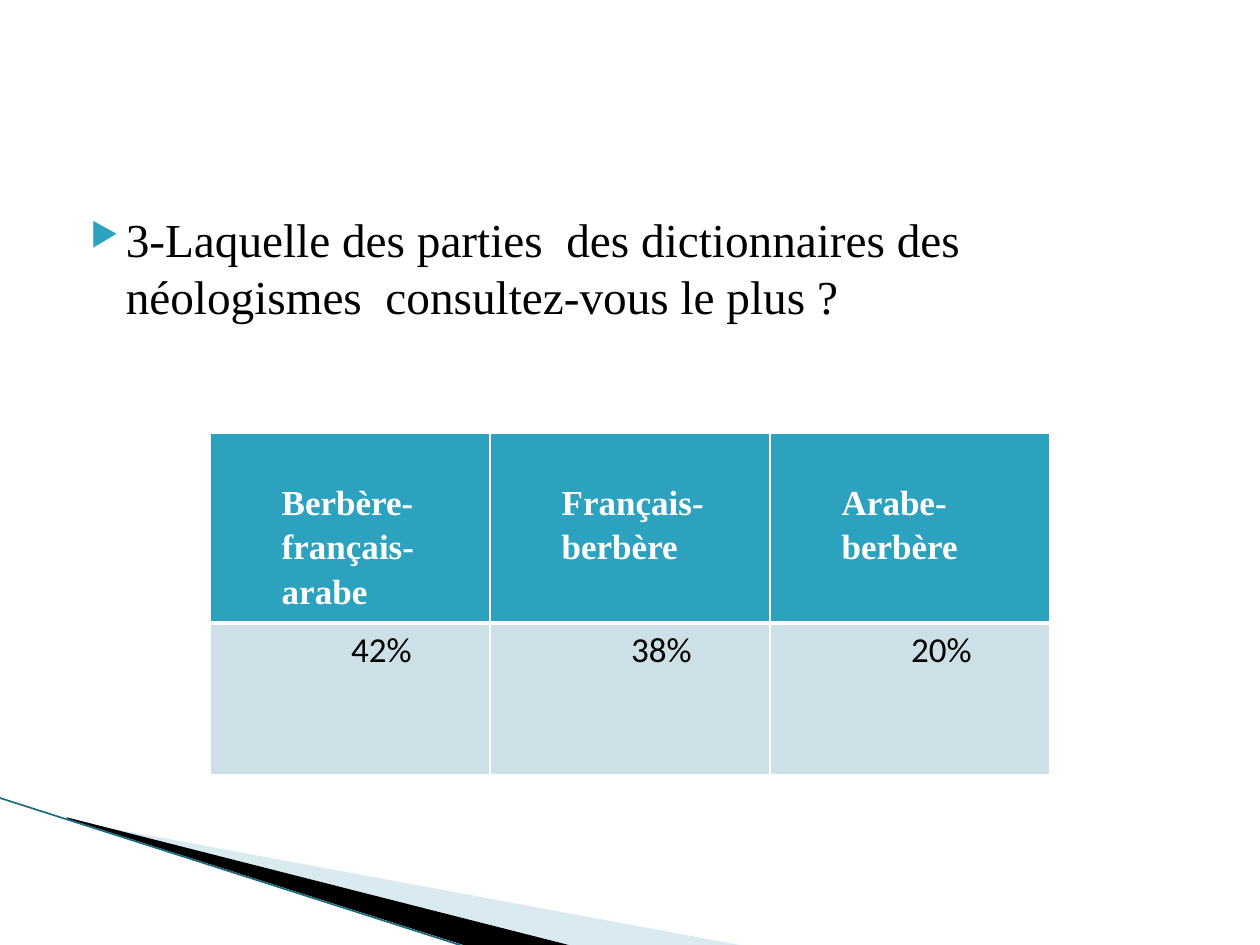
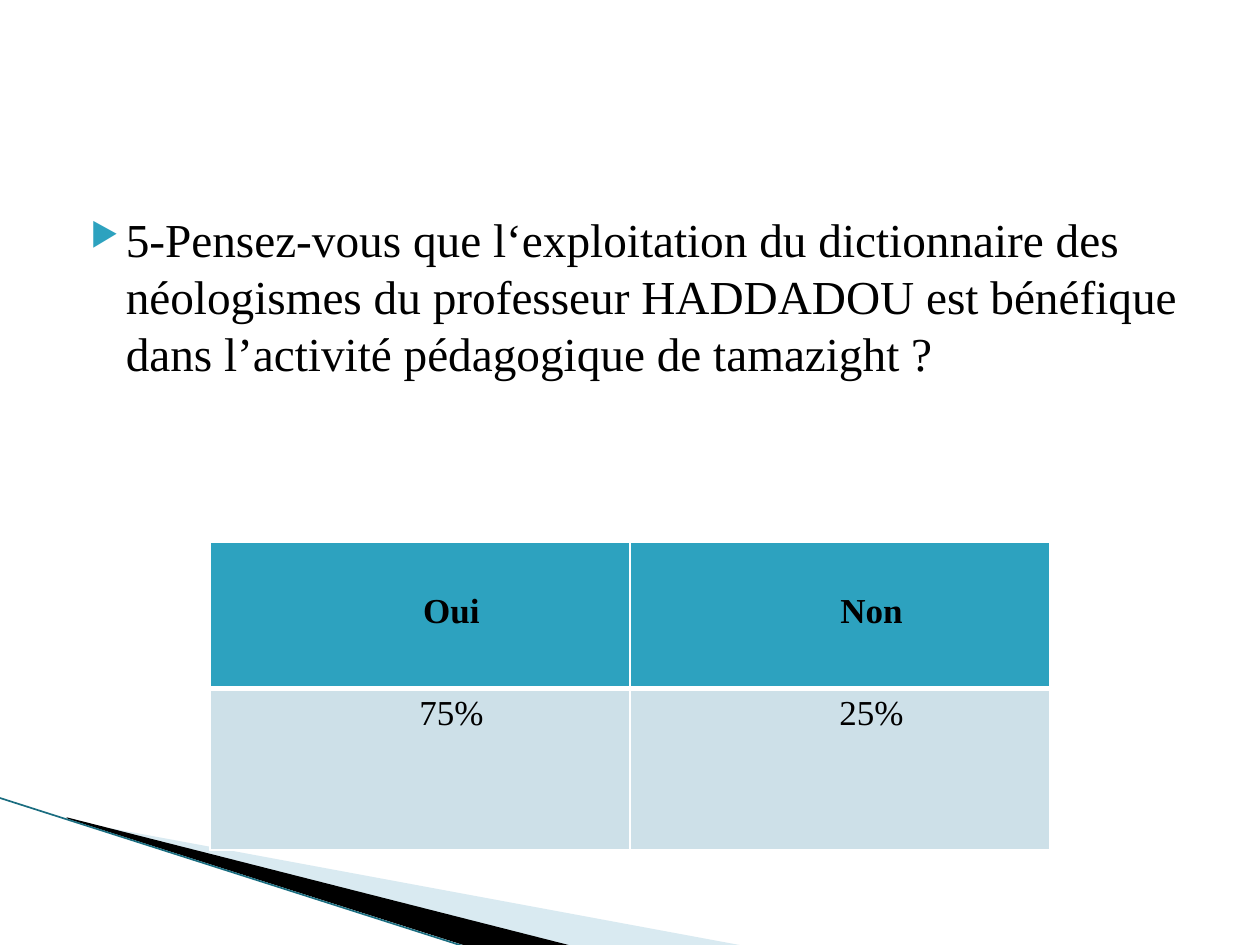
"""Build two survey slides, each with a question and its table of answers."""
from lxml.etree import SubElement
from pptx import Presentation
from pptx.dml.color import RGBColor
from pptx.enum.shapes import MSO_CONNECTOR
from pptx.enum.text import PP_ALIGN
from pptx.oxml.ns import qn
from pptx.util import Pt

TEAL, PALE, WHITE, BLACK = "2DA2BF", "CDE0E8", "FFFFFF", "000000"
WEDGE, EDGE = "A0CBDC", "1A6D80"
SERIF = "Times New Roman"
TABLE_LEFT, TABLE_WIDTH = 120, 480

SURVEY = [
    {
        "question": "3-Laquelle des parties  des dictionnaires des néologismes  consultez-vous le plus ?",
        "answers": [("Berbère-français-arabe", "42%"), ("Français- berbère", "38%"), ("Arabe-berbère", "20%")],
        "top": 247.7, "heights": (98.3, 87),
        "header_color": WHITE, "header_align": PP_ALIGN.LEFT, "value_font": "Calibri",
    },
    {
        "question": "5-Pensez-vous que l‘exploitation du dictionnaire des néologismes du professeur HADDADOU est bénéfique dans l’activité pédagogique de tamazight ?",
        "answers": [("Oui", "75%"), ("Non", "25%")],
        "top": 309.6, "heights": (84, 92.2),
        "header_color": BLACK, "header_align": PP_ALIGN.CENTER, "value_font": SERIF,
    },
]

WEDGES = [
    (WEDGE, 40, [(39.6, 468.7), (428.4, 540.7), (328.3, 540.7), (39.6, 468)]),
    (BLACK, 100, [(38.2, 467.3), (329, 540.7), (267.8, 541.4), (38.9, 468)]),
]


def color(hex_string):
    return RGBColor.from_string(hex_string)


def add_border(cell, side, width):
    line = SubElement(cell._tc.get_or_add_tcPr(), qn(f"a:ln{side}"), w=str(Pt(width)))
    fill = SubElement(line, qn("a:solidFill"))
    SubElement(fill, qn("a:srgbClr"), val=WHITE)


deck = Presentation()
deck.slide_width, deck.slide_height = Pt(720), Pt(540)

for item in SURVEY:
    page = deck.slides.add_slide(deck.slide_layouts[6])

    for wedge_color, opacity, points in WEDGES:
        builder = page.shapes.build_freeform(*points[0], scale=Pt(1))
        builder.add_line_segments(points[1:], close=True)
        wedge = builder.convert_to_shape()
        wedge.shadow.inherit = False
        wedge.line.fill.background()
        wedge.fill.solid()
        wedge.fill.fore_color.rgb = color(wedge_color)
        if opacity < 100:
            tint = wedge._element.spPr.find(qn("a:solidFill"))[0]
            SubElement(tint, qn("a:alpha"), val=str(opacity * 1000))

    edge = page.shapes.add_connector(MSO_CONNECTOR.STRAIGHT, Pt(-0.7), Pt(455.8), Pt(267.1), Pt(541.4))
    edge.line.color.rgb = color(EDGE)
    edge.line.width = Pt(0.95)
    SubElement(edge._element.spPr, qn("a:effectLst"))

    box = page.shapes.add_textbox(Pt(36), Pt(116.6), Pt(648), Pt(356.4))
    box.text_frame.word_wrap = True
    para = box.text_frame.paragraphs[0]
    para.text = item["question"]
    para.line_spacing = Pt(32.6)
    properties = para._p.get_or_add_pPr()
    properties.set("marL", str(Pt(28.8)))
    properties.set("indent", str(Pt(-20.16)))
    bullet_color = SubElement(properties, qn("a:buClr"))
    SubElement(bullet_color, qn("a:srgbClr"), val=TEAL)
    SubElement(properties, qn("a:buSzPct"), val="68000")
    SubElement(properties, qn("a:buChar"), char="▶")
    span = para.runs[0]
    span.font.name, span.font.size = SERIF, Pt(27)
    span.font.color.rgb = color(BLACK)

    answers, heights = item["answers"], item["heights"]
    frame = page.shapes.add_table(2, len(answers), Pt(TABLE_LEFT), Pt(item["top"]), Pt(TABLE_WIDTH), Pt(sum(heights)))
    table = frame.table
    table.first_row = table.horz_banding = False
    for row, height in zip(table.rows, heights):
        row.height = Pt(height)

    for column, answer in enumerate(answers):
        table.columns[column].width = Pt(TABLE_WIDTH / len(answers))
        for row, text in enumerate(answer):
            header = row == 0
            cell = table.cell(row, column)
            cell.margin_left = cell.margin_right = Pt(5)
            cell.margin_top = Pt(25.4 if header else 0)
            cell.margin_bottom = Pt(0)
            for side in "LRTB":
                seam = (header and side == "B") or (not header and side == "T")
                add_border(cell, side, 3 if seam else 1)
            cell.fill.solid()
            cell.fill.fore_color.rgb = color(TEAL if header else PALE)
            para = cell.text_frame.paragraphs[0]
            para.text = text
            para.alignment = item["header_align"] if header else PP_ALIGN.CENTER
            para.line_spacing = 1.15
            para._p.get_or_add_pPr().set("marL", str(Pt(36)))
            span = para.runs[0]
            span.font.name = SERIF if header else item["value_font"]
            span.font.size = Pt(20)
            span.font.bold = header
            span.font.color.rgb = color(item["header_color"] if header else BLACK)

deck.save("out.pptx")
